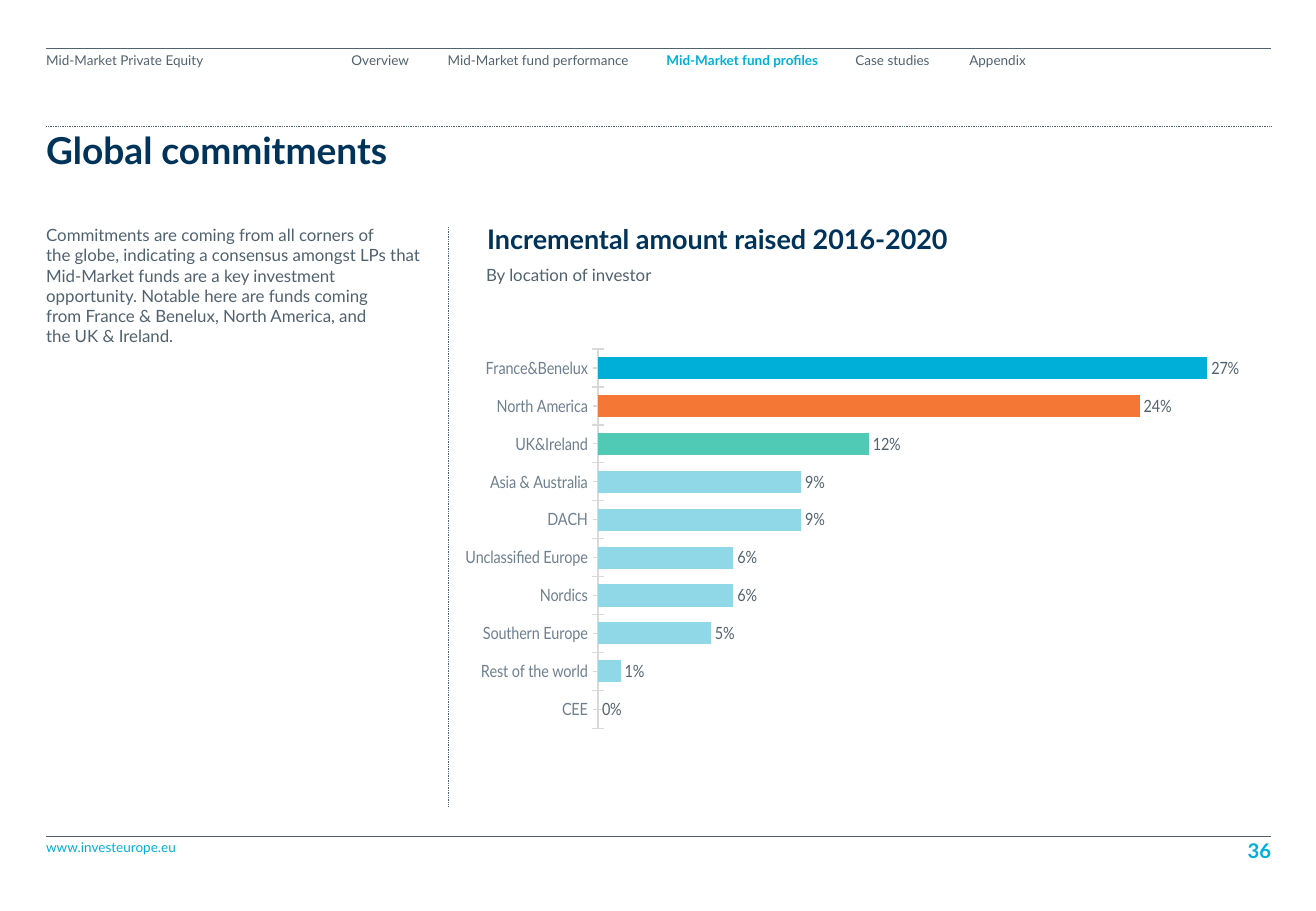
import pptx
import pptx.chart.data
import pptx.dml.color
import pptx.enum.chart
import pptx.enum.dml
import pptx.enum.shapes
import pptx.enum.text
import pptx.oxml
import pptx.oxml.ns
import pptx.util
from dataclasses import dataclass
from lxml import etree

Inches = pptx.util.Inches
Align = pptx.enum.text.PP_ALIGN
Anchor = pptx.enum.text.MSO_ANCHOR


@dataclass(frozen=True)
class Theme:
    font: str = "Lato"
    grey: str = "51626F"
    navy: str = "003359"
    cyan: str = "00AFD8"
    orange: str = "F47735"
    green: str = "50C9B5"
    pale_blue: str = "90D7E7"
    axis_label: str = "6E8090"
    axis_line: str = "D9D9D9"
    small: int = 8
    body: int = 10
    page_number: int = 12
    heading: int = 16
    title: int = 22


THEME = Theme()
LEFT, RIGHT = 0.38, 10.46

# Label, left, width
NAVIGATION = [
    ("Overview", 2.81, 0.64),
    ("Mid-Market fund performance", 3.64, 1.58),
    ("Mid-Market fund profiles", 5.46, 1.3),
    ("Case studies", 7, 0.69),
    ("Appendix", 7.94, 0.54),
]
CURRENT_SECTION = "Mid-Market fund profiles"

COMMENTARY = (
    "Commitments are coming from all corners of\v"
    "the globe, indicating a consensus amongst LPs that Mid-Market funds "
    "are a key investment opportunity. Notable here are funds coming\v"
    "from France & Benelux, North America, and\v"
    "the UK & Ireland."
)

# Region, share, bar colour, from the bottom bar up
COMMITMENTS = [
    ("CEE", 0, THEME.pale_blue),
    ("Rest of the world", 0.01, THEME.pale_blue),
    ("Southern Europe", 0.05, THEME.pale_blue),
    ("Nordics", 0.06, THEME.pale_blue),
    ("Unclassified Europe", 0.06, THEME.pale_blue),
    ("DACH", 0.09, THEME.pale_blue),
    ("Asia & Australia", 0.09, THEME.pale_blue),
    ("UK&Ireland", 0.12, THEME.green),
    ("North America", 0.24, THEME.orange),
    ("France&Benelux", 0.27, THEME.cyan),
]


def rgb(colour):
    return pptx.dml.color.RGBColor.from_string(colour)


def set_all(target, values):
    for name, value in values.items():
        setattr(target, name, value)


def set_font(font, size, colour, bold=False):
    set_all(font, {"name": THEME.font, "size": pptx.util.Pt(size), "bold": bold})
    font.color.rgb = rgb(colour)


def format_text(shape, text, size, colour, bold=False, align=Align.LEFT,
                spacing=1.0, anchor=Anchor.TOP, top=0, wrap=True):
    """Fill a text box or placeholder with one formatted paragraph."""
    frame = shape.text_frame
    set_all(frame, {
        "text": text,
        "word_wrap": wrap,
        "auto_size": pptx.enum.text.MSO_AUTO_SIZE.NONE,
        "vertical_anchor": anchor,
        "margin_left": 0,
        "margin_right": 0,
        "margin_top": Inches(top),
        "margin_bottom": 0,
    })
    paragraph = frame.paragraphs[0]
    if shape.is_placeholder:
        properties = paragraph._p.get_or_add_pPr()
        properties.set("marL", "0")
        properties.set("indent", "0")
        etree.SubElement(properties, pptx.oxml.ns.qn("a:buNone"))
    set_all(paragraph, {
        "alignment": align,
        "line_spacing": spacing,
        "space_before": pptx.util.Pt(0),
    })
    for run in paragraph.runs:
        set_font(run.font, size, colour, bold)


def add_text(slide, box, text, size, colour, **options):
    shape = slide.shapes.add_textbox(*map(Inches, box))
    format_text(shape, text, size, colour, **options)


def fill_placeholder(shape, box, text, size, colour, **options):
    set_all(shape, dict(zip(("left", "top", "width", "height"), map(Inches, box))))
    format_text(shape, text, size, colour, **options)


def add_rule(slide, start, end, dotted=False):
    line = slide.shapes.add_connector(
        pptx.enum.shapes.MSO_CONNECTOR.STRAIGHT, *map(Inches, start + end))
    line.line.width = pptx.util.Pt(0.5)
    line.line.color.rgb = rgb(THEME.grey)
    if dotted:
        line.line.dash_style = pptx.enum.dml.MSO_LINE.ROUND_DOT
    etree.SubElement(line._element.spPr, pptx.oxml.ns.qn("a:effectLst"))


def set_plot_area(chart, x, y, width, height):
    """Fix the inner plot area as fractions of the chart."""
    plot_area = chart._chartSpace.chart.plotArea
    for layout in plot_area.findall(pptx.oxml.ns.qn("c:layout")):
        plot_area.remove(layout)
    values = {"layoutTarget": "inner", "xMode": "edge", "yMode": "edge",
              "x": x, "y": y, "w": width, "h": height}
    items = "".join(f'<c:{name} val="{value}"/>' for name, value in values.items())
    plot_area.insert(0, pptx.oxml.parse_xml(
        f'<c:layout {pptx.oxml.ns.nsdecls("c")}>'
        f"<c:manualLayout>{items}</c:manualLayout></c:layout>"))


def add_commitments_chart(slide, box):
    regions, shares, colours = zip(*COMMITMENTS)
    data = pptx.chart.data.CategoryChartData(number_format="0%")
    data.categories = regions
    data.add_series("Series 1", shares)
    chart = slide.shapes.add_chart(
        pptx.enum.chart.XL_CHART_TYPE.BAR_CLUSTERED, *map(Inches, box), data).chart
    set_all(chart, {"has_legend": False, "has_title": False})
    set_font(chart.font, THEME.body, THEME.grey)
    set_plot_area(chart, 0.02, 0.04, 0.96, 0.87)

    # Axes
    cross = pptx.enum.chart.XL_TICK_MARK.CROSS
    set_all(chart.category_axis, {"major_tick_mark": cross, "minor_tick_mark": cross})
    set_font(chart.category_axis.tick_labels.font, THEME.body, THEME.axis_label)
    axis_line = chart.category_axis.format.line
    axis_line.width = pptx.util.Pt(1)
    axis_line.color.rgb = rgb(THEME.axis_line)
    set_all(chart.value_axis, {
        "visible": False,
        "has_major_gridlines": False,
        "minimum_scale": 0,
        "maximum_scale": 0.3,
    })

    # Bars and their labels
    plot = chart.plots[0]
    set_all(plot, {"gap_width": 71, "vary_by_categories": False,
                   "has_data_labels": True})
    for index, colour in enumerate(colours):
        fill = plot.series[0].points[index].format.fill
        fill.solid()
        fill.fore_color.rgb = rgb(colour)
    set_all(plot.data_labels, {
        "show_value": True,
        "number_format": "0%",
        "number_format_is_linked": False,
        "position": pptx.enum.chart.XL_LABEL_POSITION.OUTSIDE_END,
    })
    set_font(plot.data_labels.font, THEME.body, THEME.grey)


def add_header(slide):
    add_rule(slide, (LEFT, 0.4), (RIGHT, 0.4))
    add_rule(slide, (LEFT, 1.04), (RIGHT, 1.04), dotted=True)
    add_text(slide, (LEFT, 0.4, 1.89, 0.46), "Mid-Market Private Equity",
             THEME.small, THEME.grey, spacing=0.9, top=0.04)
    for label, left, width in NAVIGATION:
        current = label == CURRENT_SECTION
        add_text(slide, (left, 0.4, width, 0.16), label, THEME.small,
                 THEME.cyan if current else THEME.grey, bold=current,
                 align=Align.CENTER, spacing=0.9, top=0.04, wrap=False)


def add_footer(slide):
    add_rule(slide, (LEFT, 6.89), (RIGHT, 6.89))
    add_text(slide, (LEFT, 6.91, 3.66, 0.13), "www.investeurope.eu",
             THEME.small, THEME.cyan)
    add_text(slide, (8.02, 6.9, 2.44, 0.2), "36", THEME.page_number, THEME.cyan,
             bold=True, align=Align.RIGHT, anchor=Anchor.BOTTOM)


def main():
    presentation = pptx.Presentation()
    set_all(presentation, {"slide_width": Inches(10.83), "slide_height": Inches(7.5)})
    slide = presentation.slides.add_slide(presentation.slide_layouts[3])
    title, commentary, subtitle = slide.placeholders

    add_header(slide)
    fill_placeholder(title, (LEFT, 1.05, 10.08, 0.41), "Global commitments",
                     THEME.title, THEME.navy, bold=True, spacing=0.9, top=0.04)

    # Commentary column
    fill_placeholder(commentary, (LEFT, 1.85, 3.15, 4.54), COMMENTARY,
                     THEME.body, THEME.grey)
    add_rule(slide, (3.69, 1.87), (3.69, 6.64), dotted=True)

    # Chart column
    add_text(slide, (4.01, 1.86, 5.57, 0.24), "Incremental amount raised 2016-2020",
             THEME.heading, THEME.navy, bold=True, spacing=0.9)
    fill_placeholder(subtitle, (4, 2.18, 6.46, 0.22), "By location of investor",
                     THEME.body, THEME.grey)
    add_commitments_chart(slide, (3.83, 2.73, 6.78, 3.59))

    add_footer(slide)
    presentation.save("out.pptx")


if __name__ == "__main__":
    main()
